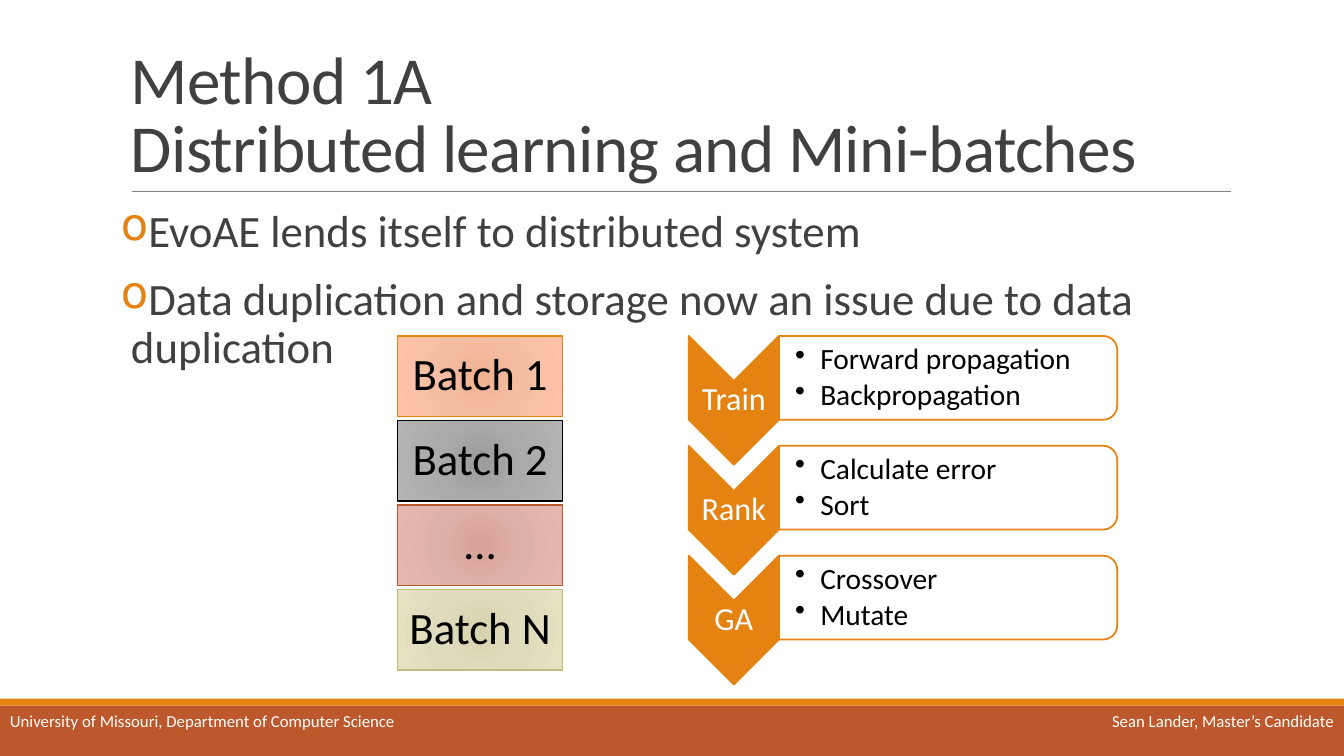
from dataclasses import dataclass
from math import cos, pi, sin

from lxml.etree import SubElement
from pptx import Presentation
from pptx.dml.color import RGBColor
from pptx.enum.shapes import MSO_CONNECTOR, MSO_SHAPE
from pptx.enum.text import MSO_ANCHOR, PP_ALIGN
from pptx.oxml import parse_xml
from pptx.oxml.ns import nsdecls, qn
from pptx.util import Pt


@dataclass(frozen=True)
class Theme:
    font: str = "Calibri"
    white: str = "FFFFFF"
    black: str = "000000"
    text: str = "404040"
    rule: str = "808080"
    orange: str = "E48312"
    rust: str = "BD582C"
    khaki: str = "C2BC80"
    title: float = 48
    body: float = 32
    step: float = 23
    card: float = 21
    footer: float = 12


T = Theme()
BATCHES = [
    ("Batch 1", T.orange, ("F0B191", "F5BEA4", "FDC3A8")),
    ("Batch 2", T.black, ("9C9C9C", "AAAAAA", "B4B4B4")),
    ("…", T.rust, ("D7A197", "DEB1A8", "E6B7AE")),
    ("Batch N", T.khaki, ("D7D3AF", "DFDBBD", "E5E1C1")),
]
STEPS = [
    ("Train", ["Forward propagation", "Backpropagation"]),
    ("Rank", ["Calculate error", "Sort"]),
    ("GA", ["Crossover", "Mutate"]),
]


def rgb(color):
    return RGBColor.from_string(color)


def write(s, lines, size, color, align=PP_ALIGN.LEFT, anchor=MSO_ANCHOR.TOP,
          insets=(7.2, 3.6, 7.2, 3.6), spacing=0.9, gap=0, tracking=0,
          bullet=None, bullet_color=None, indent=(0, 0)):
    """Fill a shape with paragraphs; gap is the space between them."""
    tf = s.text_frame
    tf.word_wrap = True
    tf.vertical_anchor = anchor
    tf.margin_left, tf.margin_top, tf.margin_right, tf.margin_bottom = map(Pt, insets)
    for i, line in enumerate(lines):
        p = tf.add_paragraph() if i else tf.paragraphs[0]
        p.text = line
        p.alignment = align
        p.line_spacing = spacing
        p.space_before = Pt(gap if i else 0)
        if bullet:
            pPr = p._p.get_or_add_pPr()
            pPr.set("marL", str(Pt(indent[0])))
            pPr.set("indent", str(Pt(indent[1])))
            clr = SubElement(pPr, qn("a:buClr"))
            SubElement(clr, qn("a:srgbClr")).set("val", bullet_color or color)
            SubElement(pPr, qn("a:buChar")).set("char", bullet)
        for r in p.runs:
            r.font.name = T.font
            r.font.size = Pt(size)
            r.font.color.rgb = rgb(color)
            if tracking:
                r._r.get_or_add_rPr().set("spc", str(round(tracking * 100)))


def paint(s, fill, line=None, width=1.0):
    s.shadow.inherit = False
    s.fill.solid()
    s.fill.fore_color.rgb = rgb(fill)
    if line:
        s.line.color.rgb = rgb(line)
        s.line.width = Pt(width)
    else:
        s.line.fill.background()


def text_box(slide, x, y, w, h, lines, **fmt):
    write(slide.shapes.add_textbox(Pt(x), Pt(y), Pt(w), Pt(h)), lines, **fmt)


def rectangle(slide, x, y, w, h, fill, line=None):
    s = slide.shapes.add_shape(MSO_SHAPE.RECTANGLE, Pt(x), Pt(y), Pt(w), Pt(h))
    paint(s, fill, line)
    return s


def polygon(slide, points, fill, line, width):
    start, *rest = [(Pt(x), Pt(y)) for x, y in points]
    builder = slide.shapes.build_freeform(*start)
    builder.add_line_segments(rest, close=True)
    s = builder.convert_to_shape()
    paint(s, fill, line, width)
    return s


def radial_fill(s, colors):
    """Swap the solid fill for a circular gradient from the centre out."""
    stops = "".join(f'<a:gs pos="{pos}000"><a:srgbClr val="{color}"/></a:gs>'
                    for pos, color in zip((0, 45, 100), colors))
    grad = parse_xml(
        f'<a:gradFill {nsdecls("a")} rotWithShape="1"><a:gsLst>{stops}</a:gsLst>'
        '<a:path path="circle"><a:fillToRect l="100000" t="100000" r="100000" '
        'b="100000"/></a:path></a:gradFill>')
    spPr = s._element.spPr
    spPr.replace(spPr.find(qn("a:solidFill")), grad)


def footer(slide, x, y, w, h):
    band = 5
    rectangle(slide, x, y + band, w, h - band, T.rust)
    rectangle(slide, x, y, w, band, T.orange)
    fmt = dict(size=T.footer, color=T.white, spacing=1.0)
    text_box(slide, x, y + band, 424, h - band,
             ["University of Missouri, Department of Computer Science"], **fmt)
    text_box(slide, x + w / 2, y + band, w / 2, h - band,
             ["Sean Lander, Master’s Candidate"], align=PP_ALIGN.RIGHT, **fmt)


def heading(slide, x, y, w, h):
    text_box(slide, x, y, w, h, ["Method 1A\vDistributed learning and Mini-batches"],
             size=T.title, color=T.text, anchor=MSO_ANCHOR.BOTTOM,
             spacing=0.85, tracking=-0.5)
    rule = slide.shapes.add_connector(MSO_CONNECTOR.STRAIGHT, Pt(x + 8), Pt(y + h),
                                      Pt(x + w + 0.8), Pt(y + h))
    rule.line.color.rgb = rgb(T.rule)
    rule.line.width = Pt(0.5)
    SubElement(rule._element.spPr, qn("a:effectLst"))


def points_list(slide, x, y, w, h):
    text_box(slide, x, y, w, h,
             ["EvoAE lends itself to distributed system",
              "Data duplication and storage now an issue due to data duplication"],
             size=T.body, color=T.text, insets=(0, 3.6, 0, 3.6), gap=14,
             bullet="o", bullet_color=T.orange, indent=(7.2, -7.2))


def batch_stack(slide, x, y, w, h):
    gap = 2.9
    tile = (h - gap * (len(BATCHES) - 1)) / len(BATCHES)
    for i, (name, line, colors) in enumerate(BATCHES):
        s = rectangle(slide, x, y + i * (tile + gap), w, tile, colors[1], line)
        radial_fill(s, colors)
        write(s, [name], size=T.body, color=T.black, align=PP_ALIGN.CENTER,
              anchor=MSO_ANCHOR.MIDDLE, insets=(6.5,) * 4)


def chevron(slide, x, y, w, h, name):
    notch = w / 2
    outline = [(x, y), (x + w / 2, y + notch), (x + w, y), (x + w, y + h - notch),
               (x + w / 2, y + h), (x, y + h - notch)]
    s = polygon(slide, outline, T.orange, T.orange, 1.25)
    write(s, [name], size=T.step, color=T.white, align=PP_ALIGN.CENTER,
          anchor=MSO_ANCHOR.MIDDLE, insets=(1.4, 33, 1.4, 33))


def card(slide, x, y, w, h, tasks):
    """Panel with its two right corners rounded."""
    radius, turns = 10, 8
    outline = [(x, y + h), (x, y)]
    for cy, start in ((y + radius, -pi / 2), (y + h - radius, 0)):
        for i in range(turns + 1):
            a = start + i * pi / 2 / turns
            outline.append((x + w - radius + radius * cos(a), cy + radius * sin(a)))
    s = polygon(slide, outline, T.white, T.orange, 1.25)
    color = s._element.spPr.find(qn("a:solidFill"))[0]
    SubElement(color, qn("a:alpha")).set("val", "90000")
    write(s, tasks, size=T.card, color=T.black, anchor=MSO_ANCHOR.MIDDLE,
          insets=(11.5, 4.3, 4.3, 4.3), gap=3, bullet="•", indent=(18, -18))


def step_list(slide, x, y, w, h):
    arrow_w, arrow_h, card_h = 64.4, 92, 59.8
    pitch = (h - arrow_h) / (len(STEPS) - 1)
    for i, (name, tasks) in enumerate(STEPS):
        top = y + i * pitch
        chevron(slide, x, top, arrow_w, arrow_h, name)
        card(slide, x + arrow_w, top, w - arrow_w, card_h, tasks)


def main():
    prs = Presentation()
    prs.slide_width, prs.slide_height = Pt(960), Pt(540)
    slide = prs.slides.add_slide(prs.slide_layouts[6])
    footer(slide, 0, 499, 960, 41)
    heading(slide, 86.4, 22.5, 792, 114.2)
    points_list(slide, 86.4, 145.4, 792, 316.8)
    step_list(slide, 492, 240, 306, 249)
    batch_stack(slide, 284, 240, 118, 238.6)
    prs.save("out.pptx")


if __name__ == "__main__":
    main()
